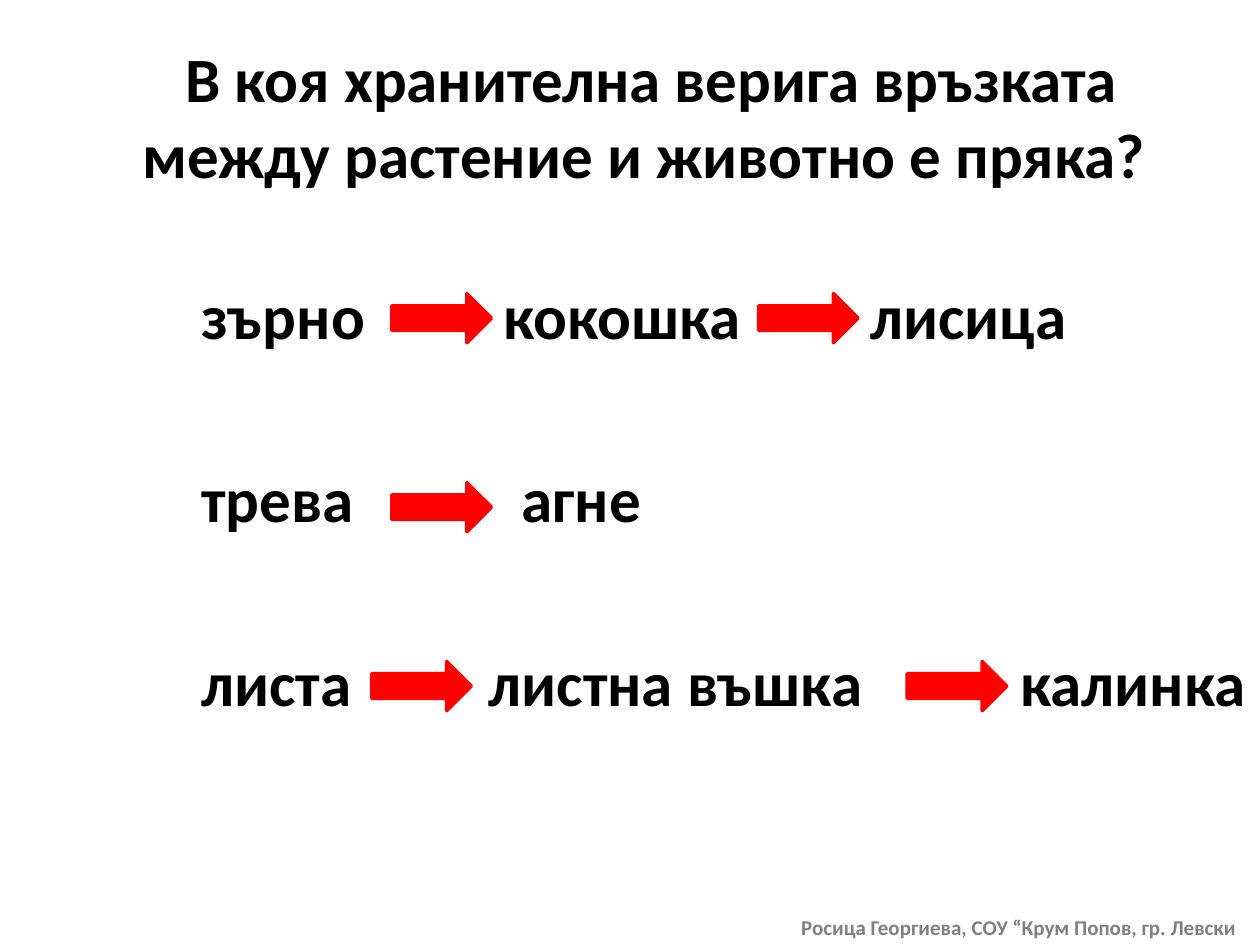
import pptx
import pptx.dml.color
import pptx.enum.shapes
import pptx.enum.text
import pptx.util
import lxml.etree

ALIGN = pptx.enum.text.PP_ALIGN
ANCHOR = pptx.enum.text.MSO_ANCHOR

COLUMNS, ROWS = 100, 75      # grid cells of a tenth of an inch
CHAIN_LEFT, CHAIN_WIDTH, CHAIN_HEIGHT = 15, 85, 13.3
FIRST_CHAIN, CHAIN_PITCH = 18.3, 14.55
ARROW_WIDTH, ARROW_HEIGHT = 7.9, 3.9

# Each chain: words, tab stops measured from the text edge, arrow columns, arrow row
CHAINS = [
    (["зърно", "кокошка", "лисица"], [24, 53.1], [31.1, 60.2], 23.3),
    (["трева", "агне"], [25.4], [31.1], 38.3),
    (["листа", "листна въшка", "калинка"], [22.8, 65], [29.5, 72], 52.5),
]


def color(value):
    return pptx.dml.color.RGBColor.from_string(value)


def write(box, text, size=36, ink="000000", align=ALIGN.LEFT, tabs=()):
    """Put one bold paragraph into a box, with optional tab stops."""
    para = box.text_frame.paragraphs[0]
    para.alignment = align
    if tabs:
        properties = para._p.get_or_add_pPr()
        namespace = "{" + properties.nsmap["a"] + "}"
        stops = lxml.etree.SubElement(properties, namespace + "tabLst")
        for stop in tabs:
            lxml.etree.SubElement(stops, namespace + "tab", pos=str(int(stop)), algn="l")
    span = para.add_run()
    span.text = text
    span.font.name = "Calibri"
    span.font.size = pptx.util.Pt(size)
    span.font.bold = True
    span.font.color.rgb = color(ink)


class Page:
    """The current slide, its grid and the style of its parts."""

    arrow_color = "FF0000"
    footer_color = "808080"

    def __init__(self, deck):
        self.slide = deck.slides.add_slide(deck.slide_layouts[6])
        self.column = deck.slide_width / COLUMNS
        self.row = deck.slide_height / ROWS

    def place(self, left, top, width, height):
        return (round(left * self.column), round(top * self.row),
                round(width * self.column), round(height * self.row))

    def text(self, words, area, anchor=ANCHOR.MIDDLE, **style):
        box = self.slide.shapes.add_textbox(*self.place(*area))
        box.text_frame.word_wrap = True
        box.text_frame.vertical_anchor = anchor
        write(box, words, **style)
        return box

    def arrow(self, left, top):
        shape = self.slide.shapes.add_shape(
            pptx.enum.shapes.MSO_SHAPE.RIGHT_ARROW,
            *self.place(left, top, ARROW_WIDTH, ARROW_HEIGHT))
        shape.shadow.inherit = False
        shape.fill.solid()
        shape.fill.fore_color.rgb = color(self.arrow_color)
        shape.line.color.rgb = color(self.arrow_color)
        shape.line.width = pptx.util.Pt(2)

    def chain(self, index, words, stops, arrows, arrow_row):
        area = (CHAIN_LEFT, FIRST_CHAIN + index * CHAIN_PITCH, CHAIN_WIDTH, CHAIN_HEIGHT)
        box = self.text("\t".join(words), area, tabs=[stop * self.column for stop in stops])
        box.text_frame.margin_right = 0
        for left in arrows:
            self.arrow(left, arrow_row)


def main():
    deck = pptx.Presentation()
    deck.slide_width = pptx.util.Inches(10)
    deck.slide_height = pptx.util.Inches(7.5)
    page = Page(deck)

    # Question
    page.text("В коя хранителна верига връзката между растение и животно е пряка? ",
              (6.7, 2.9, 90, 12.5), align=ALIGN.CENTER)

    # Food chains
    for index, chain in enumerate(CHAINS):
        page.chain(index, *chain)

    # Author line
    page.text("Росица Георгиева, СОУ “Крум Попов, гр. Левски", (62.6, 72.1, 37.4, 3),
              anchor=ANCHOR.TOP, size=12, ink=page.footer_color)

    deck.save("out.pptx")


if __name__ == "__main__":
    main()
